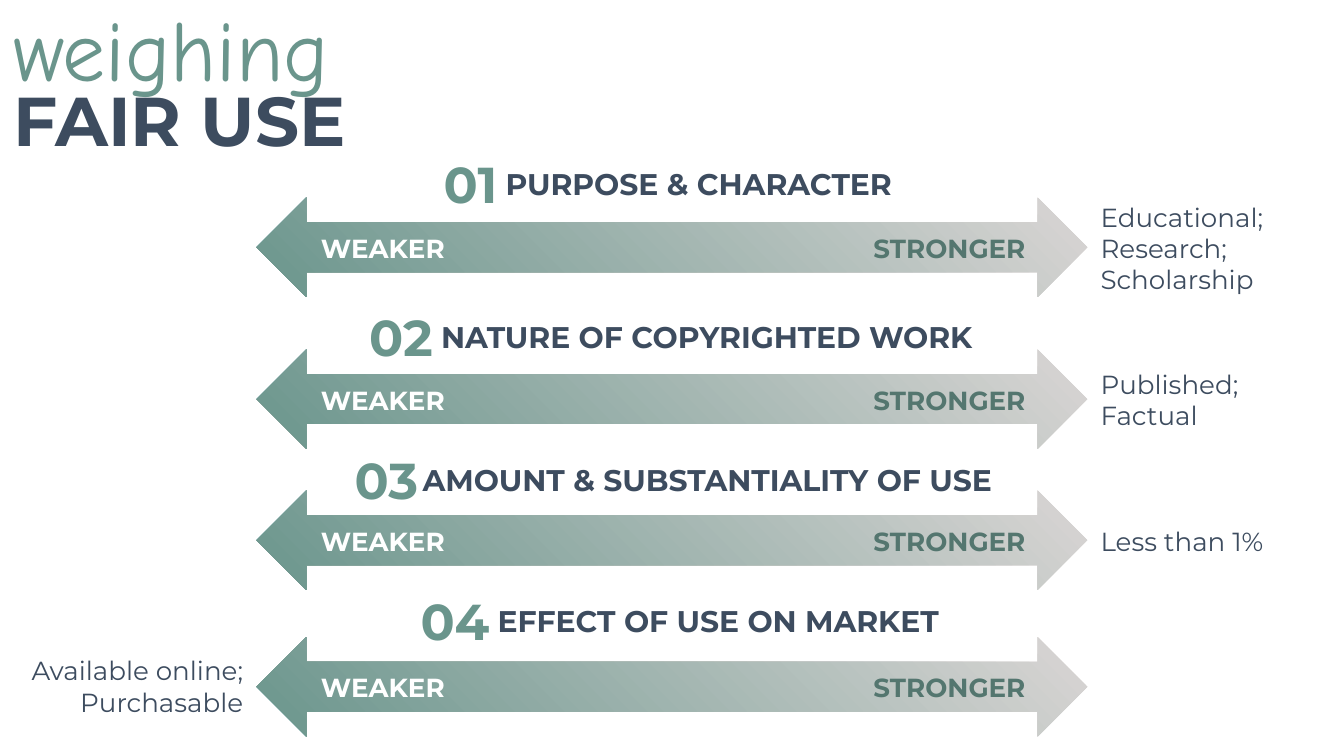
from pptx import Presentation
from pptx.dml.color import RGBColor
from pptx.enum.shapes import MSO_SHAPE as Shape
from pptx.enum.text import MSO_ANCHOR as Anchor, MSO_AUTO_SIZE as AutoSize, PP_ALIGN as Align
from pptx.util import Inches, Pt

GREEN, NAVY, GRAY, DARK_GREEN, WHITE = "6A958C", "3D4C5F", "DAD6D5", "54766F", "FFFFFF"


def color(value):
    return RGBColor.from_string(value)


def add_text(box, lines, size, fill, bold=True, align=Align.LEFT, font="Montserrat", grow=False):
    text_box = slide.shapes.add_textbox(*[Inches(value) for value in box])
    frame = text_box.text_frame
    frame.word_wrap = True
    frame.auto_size = AutoSize.SHAPE_TO_FIT_TEXT if grow else AutoSize.NONE
    frame.vertical_anchor = Anchor.TOP if grow else Anchor.MIDDLE
    frame.margin_left = frame.margin_right = Inches(0.1)
    frame.margin_top = frame.margin_bottom = Inches(0.1)
    for index, line in enumerate(lines):
        paragraph = frame.add_paragraph() if index else frame.paragraphs[0]
        paragraph.alignment = align
        run = paragraph.add_run()
        run.text = line
        run.font.name = font
        run.font.size = Pt(size)
        run.font.bold = bold
        run.font.color.rgb = color(fill)


presentation = Presentation()
presentation.slide_width = Inches(10)
presentation.slide_height = Inches(10) * 9 // 16
slide = presentation.slides.add_slide(presentation.slide_layouts[6])

add_text((0, -0.13, 4.08, 0.98), ["weighing"], 46, GREEN, bold=False, font="Comic Neue", grow=True)
add_text((0, 0.48, 5.07, 0.82), ["FAIR USE"], 37, NAVY, grow=True)

factors = [
    ("PURPOSE & CHARACTER", 1.04, 1.47, (3.16, 0.64), (3.56, 3.28)),
    ("NATURE OF COPYRIGHTED WORK", 2.18, 2.6, (2.61, 0.71), (3.13, 4.26)),
    ("AMOUNT & SUBSTANTIALITY OF USE ", 3.24, 3.65, (2.45, 0.76), (3.04, 4.51)),
    ("EFFECT OF USE ON MARKET", 4.29, 4.74, (2.89, 0.85), (3.58, 3.53)),
]
for number, (title, top, arrow_top, number_span, title_span) in enumerate(factors, 1):
    add_text((number_span[0], top, number_span[1], 0.66), [f"{number:02}"], 27, GREEN,
             align=Align.RIGHT, grow=True)
    add_text((title_span[0], top + 0.09, title_span[1], 0.47), [title], 16, NAVY, align=Align.CENTER)

    arrow = slide.shapes.add_shape(Shape.LEFT_RIGHT_ARROW, Inches(1.91), Inches(arrow_top),
                                   Inches(6.18), Inches(0.74))
    arrow.shadow.inherit = False
    arrow.line.fill.background()
    arrow.fill.gradient()
    arrow.fill.gradient_angle = 225
    for stop, value in zip(arrow.fill.gradient_stops, (GRAY, GREEN)):
        stop.color.rgb = color(value)

    label_top = arrow_top + 0.19
    add_text((2.29, label_top, 1.26, 0.37), ["WEAKER"], 14, WHITE)
    add_text((6.29, label_top, 1.44, 0.37), ["STRONGER"], 14, DARK_GREEN, align=Align.RIGHT)

examples = [
    ((8.09, 1.39, 1.72, 0.91), ["Educational; Research;", "Scholarship"], Align.LEFT),
    ((8.09, 2.64, 1.72, 0.67), ["Published;", "Factual"], Align.LEFT),
    ((8.09, 3.69, 1.72, 0.67), ["Less than 1%"], Align.LEFT),
    ((0, 4.77, 1.91, 0.67), ["Available online;", "Purchasable"], Align.RIGHT),
]
for box, lines, align in examples:
    add_text(box, lines, 14, NAVY, bold=False, align=align)

presentation.save("out.pptx")
